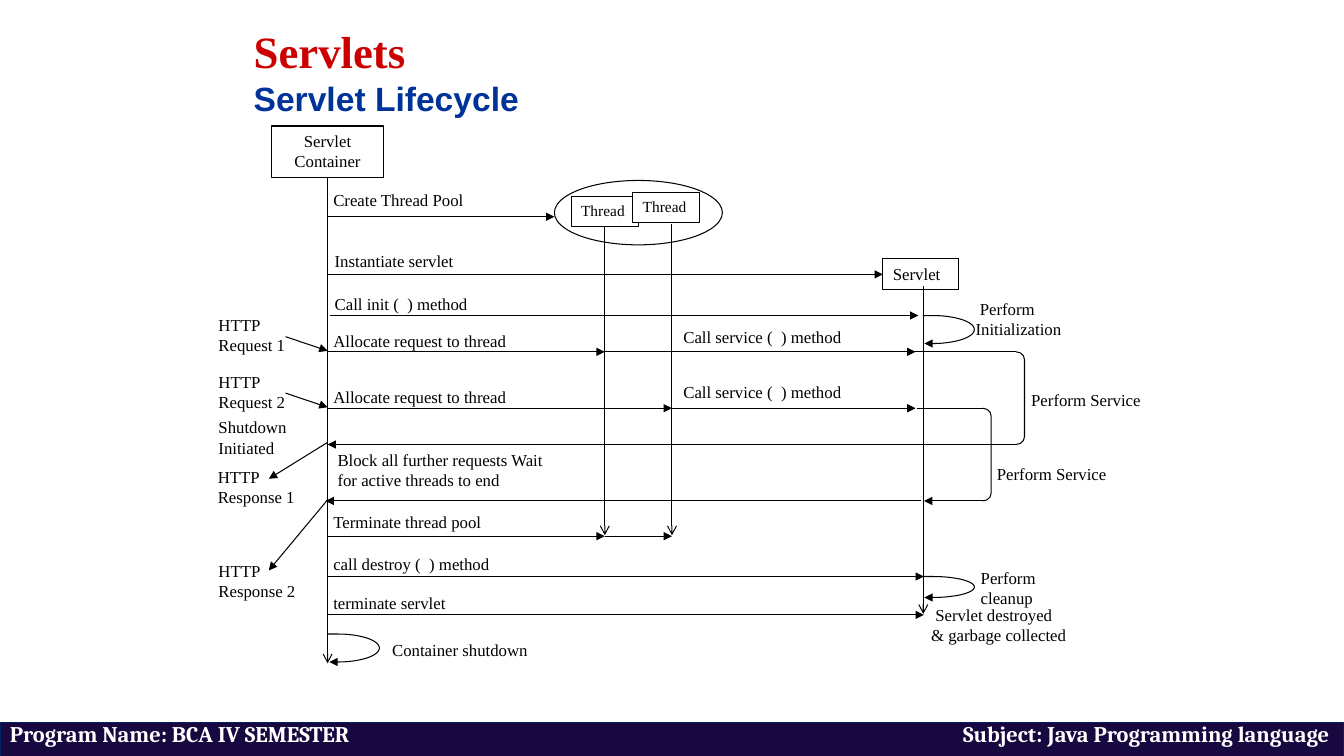
import math
import pptx
import pptx.util
import pptx.dml.color
import pptx.enum.shapes
import pptx.enum.text
import pptx.oxml.ns
from lxml import etree

Pt = pptx.util.Pt
RGBColor = pptx.dml.color.RGBColor
MSO_SHAPE = pptx.enum.shapes.MSO_SHAPE
PP_ALIGN = pptx.enum.text.PP_ALIGN
MSO_ANCHOR = pptx.enum.text.MSO_ANCHOR
qn = pptx.oxml.ns.qn

BLACK = RGBColor(0x00, 0x00, 0x00)
WHITE = RGBColor(0xFF, 0xFF, 0xFF)
RED = RGBColor(0xCC, 0x00, 0x00)
BLUE = RGBColor(0x00, 0x33, 0x99)
NAVY = RGBColor(0x17, 0x08, 0x40)
EDGE = RGBColor(0x00, 0x20, 0x60)
SERIF = "Times New Roman"

# Lifelines of the diagram, measured from its left edge
CONTAINER, THREAD_1, THREAD_2, SERVLET = 90, 288, 336, 515.5

# Messages: y, from x, to x
MESSAGES = [
    (64.8, CONTAINER, 252), (135.4, 91.5, 512),
    (161.3, CONTAINER, THREAD_1), (161.3, THREAD_1, 510),
    (201.6, CONTAINER, THREAD_2), (201.6, THREAD_2, 510),
    (227.5, 516, CONTAINER), (267.8, 558, 516), (267.8, 514, 88.5),
    (293, CONTAINER, THREAD_1), (293, THREAD_1, THREAD_2),
    (321.8, CONTAINER, 516), (349.2, CONTAINER, 516),
]
# Requests and responses: from x, from y, to x, to y
EXCHANGES = [(60, 150.5, 90, 160.6), (60, 190.8, 90, 200.9),
             (90, 226, 48, 252), (90, 267, 48, 317.5)]
# Labels: text, x, y, width, first-line indent
LABELS = [
    ("Create Thread Pool", 87, 41.8, 125, 0),
    ("Instantiate servlet", 88, 85.7, 125, 0),
    ("Call init (  ) method", 88, 116.6, 125, 0),
    ("Allocate request to thread", 87, 142.6, 156, 0),
    ("Allocate request to thread", 87, 182.9, 156, 0),
    ("Block all further requests Wait for active threads to end", 90, 227.5, 162, 0),
    ("Terminate thread pool", 87, 272.2, 126, 0),
    ("call destroy (  ) method", 87, 301.7, 132, 0),
    ("terminate servlet", 87, 329.8, 102, 0),
    ("Container shutdown", 129, 363.6, 120, 0),
    ("Call service (  ) method", 337, 139.7, 132, 0),
    ("Call service (  ) method", 337, 179.3, 132, 0),
    ("Perform Initialization", 545.8, 119.5, 78, 3),
    ("Perform Service", 585.5, 185, 102, 0),
    ("Perform Service", 561, 237.6, 102, 0),
    ("Perform cleanup", 549.4, 311.8, 54, 0),
    ("Servlet destroyed & garbage collected", 514, 338.4, 113, 3),
    ("HTTP Request 1", 5, 131, 75, 0),
    ("HTTP Request 2", 5, 172, 75, 0),
    ("Shutdown Initiated", 5, 204.5, 66, 0),
    ("HTTP Response 1", 4.5, 239.8, 75, 0),
    ("HTTP Response 2", 5, 306.7, 75, 0),
]


def style_run(r, size, color, name, bold=False):
    r.font.size, r.font.name, r.font.bold = Pt(size), name, bold
    r.font.color.rgb = color


def style_shape(sp, fill=None, line=BLACK):
    sp.shadow.inherit = False
    if fill is None:
        sp.fill.background()
    else:
        sp.fill.solid()
        sp.fill.fore_color.rgb = fill
    sp.line.color.rgb = line
    sp.line.width = Pt(0.75)


def set_text(sp, text, size=12, align=PP_ALIGN.LEFT):
    tf = sp.text_frame
    tf.word_wrap = True
    tf.vertical_anchor = MSO_ANCHOR.TOP
    tf.text = text
    p = tf.paragraphs[0]
    p.alignment = align
    style_run(p.runs[0], size, BLACK, SERIF)
    return p


def add_arrowhead(sp, kind):
    ln = sp.line._get_or_add_ln()
    etree.SubElement(ln, qn("a:tailEnd"), type=kind)


def add_line(s, x1, y1, x2, y2, head=None):
    c = s.shapes.add_connector(pptx.enum.shapes.MSO_CONNECTOR.STRAIGHT,
                               Pt(x1), Pt(y1), Pt(x2), Pt(y2))
    c.line.color.rgb = BLACK
    c.line.width = Pt(0.75)
    if head:
        add_arrowhead(c, head)
    etree.SubElement(c._element.spPr, qn("a:effectLst"))
    return c


def add_preset(s, kind, x, y, w, h, fill=None):
    sp = s.shapes.add_shape(kind, Pt(x), Pt(y), Pt(w), Pt(h))
    style_shape(sp, fill)
    return sp


def add_self_call(s, x, y, h):
    """Half ellipse that leaves a lifeline and returns to it."""
    cx, rx, ry = x + 7, 30, h / 2
    angles = [math.radians(a) for a in range(-90, 91, 6)]
    points = [(Pt(cx + rx * math.cos(a)), Pt(y + ry + ry * math.sin(a))) for a in angles]
    fb = s.shapes.build_freeform(Pt(x), Pt(y))
    fb.add_line_segments(points + [(Pt(x + 1.3), Pt(y + h))], close=False)
    sp = fb.convert_to_shape()
    style_shape(sp)
    add_arrowhead(sp, "triangle")


def add_title(s, x, y, w, h):
    sp = s.shapes.title
    sp.left, sp.top, sp.width, sp.height = Pt(x), Pt(y), Pt(w), Pt(h)
    tf = sp.text_frame
    tf.text = "Servlets\vServlet Lifecycle"
    tf.vertical_anchor = MSO_ANCHOR.MIDDLE
    p = tf.paragraphs[0]
    p.alignment = PP_ALIGN.LEFT
    style_run(p.runs[0], 32, RED, SERIF, True)
    style_run(p.runs[1], 24, BLUE, "Arial", True)


def add_footer(s, x, y, w, h):
    sp = add_preset(s, MSO_SHAPE.RECTANGLE, x, y, w, h, NAVY)
    sp.line.color.rgb = EDGE
    p = set_text(sp, "Program Name: BCA IV SEMESTER\tSubject: Java Programming language")
    p.line_spacing = 0.7
    tabs = etree.SubElement(p._p.get_or_add_pPr(), qn("a:tabLst"))
    etree.SubElement(tabs, qn("a:tab"), pos=str(Pt(w - 17.5)), algn="r")
    style_run(p.runs[0], 16, WHITE, "Cambria", True)


def add_lifecycle(s, x, y):
    # Participants
    container = add_preset(s, MSO_SHAPE.RECTANGLE, x + 50, y, 80, 36.7)
    set_text(container, "Servlet Container", align=PP_ALIGN.CENTER)
    add_preset(s, MSO_SHAPE.OVAL, x + 252, y + 38.9, 120, 46)
    threads = []
    for dx, dy in ((264, 50.4), (308, 47.5)):
        sp = add_preset(s, MSO_SHAPE.RECTANGLE, x + dx, y + dy, 48, 21.6, WHITE)
        set_text(sp, "Thread", 11)
        threads.append(sp)
    servlet = add_preset(s, MSO_SHAPE.RECTANGLE, x + 486.7, y + 94.8, 54, 22.4, WHITE)
    set_text(servlet, "Servlet")

    # Lifelines
    lifelines = [add_line(s, x + dx, y + top, x + dx, y + bottom, "arrow")
                 for dx, top, bottom in ((CONTAINER, 36.7, 383.8), (THREAD_1, 72, 292.3),
                                         (THREAD_2, 69.8, 292.3), (SERVLET, 114.5, 348.5))]
    lifelines[0].begin_connect(container, 2)
    lifelines[1].begin_connect(threads[0], 2)

    # Messages
    instantiate = add_line(s, x + CONTAINER, y + 106, x + 486.7, y + 106, "triangle")
    instantiate.end_connect(servlet, 1)
    for dy, x1, x2 in MESSAGES:
        add_line(s, x + x1, y + dy, x + x2, y + dy, "triangle")
    for x1, y1, x2, y2 in EXCHANGES:
        add_line(s, x + x1, y + y1, x + x2, y + y2, "triangle")

    # Service brackets
    for dx, dy in ((581.8, 161.3), (558, 201.6)):
        sp = add_preset(s, MSO_SHAPE.RIGHT_BRACKET, x + dx, y + dy, 6, 66.2)
        sp.adjustments[0] = 0.918
    for dy, x1, x2 in ((161.3, 504, 581.8), (227.5, 504, 581.8), (201.6, 511, 558)):
        add_line(s, x + x1, y + dy, x + x2, y + dy)

    # Self calls
    for dx, dy, h in ((515, 135.4, 20), (515, 321.8, 15), (CONTAINER, 362.9, 20)):
        add_self_call(s, x + dx, y + dy, h)

    # Labels
    for text, dx, dy, w, indent in LABELS:
        sp = s.shapes.add_textbox(Pt(x + dx), Pt(y + dy), Pt(w), Pt(21.6))
        p = set_text(sp, text)
        if indent:
            p._p.get_or_add_pPr().set("indent", str(Pt(indent)))


def main():
    prs = pptx.Presentation()
    prs.slide_width, prs.slide_height = Pt(960), Pt(540)
    s = prs.slides.add_slide(prs.slide_layouts[5])
    add_footer(s, 0, 516.2, 960, 24.2)
    add_lifecycle(s, 144, 90)
    add_title(s, 174, 5.8, 612, 90)
    prs.save("out.pptx")


if __name__ == "__main__":
    main()
